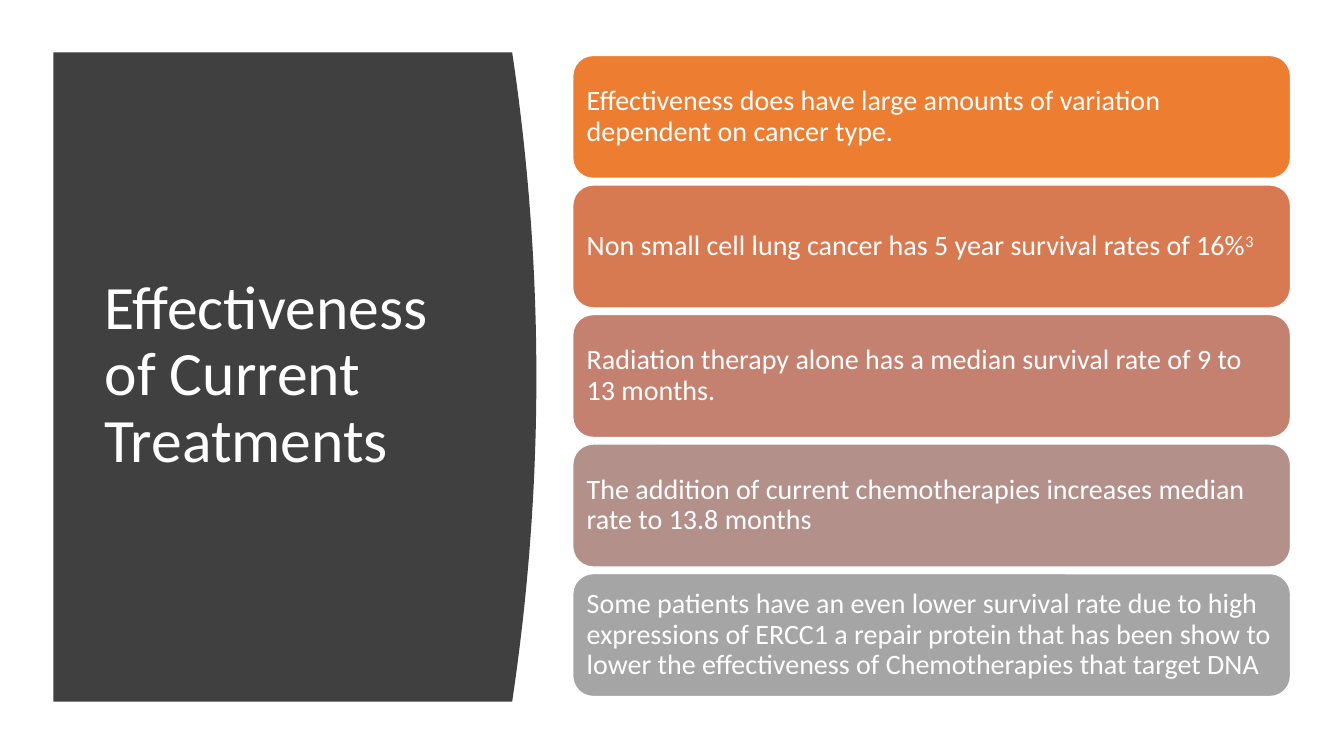
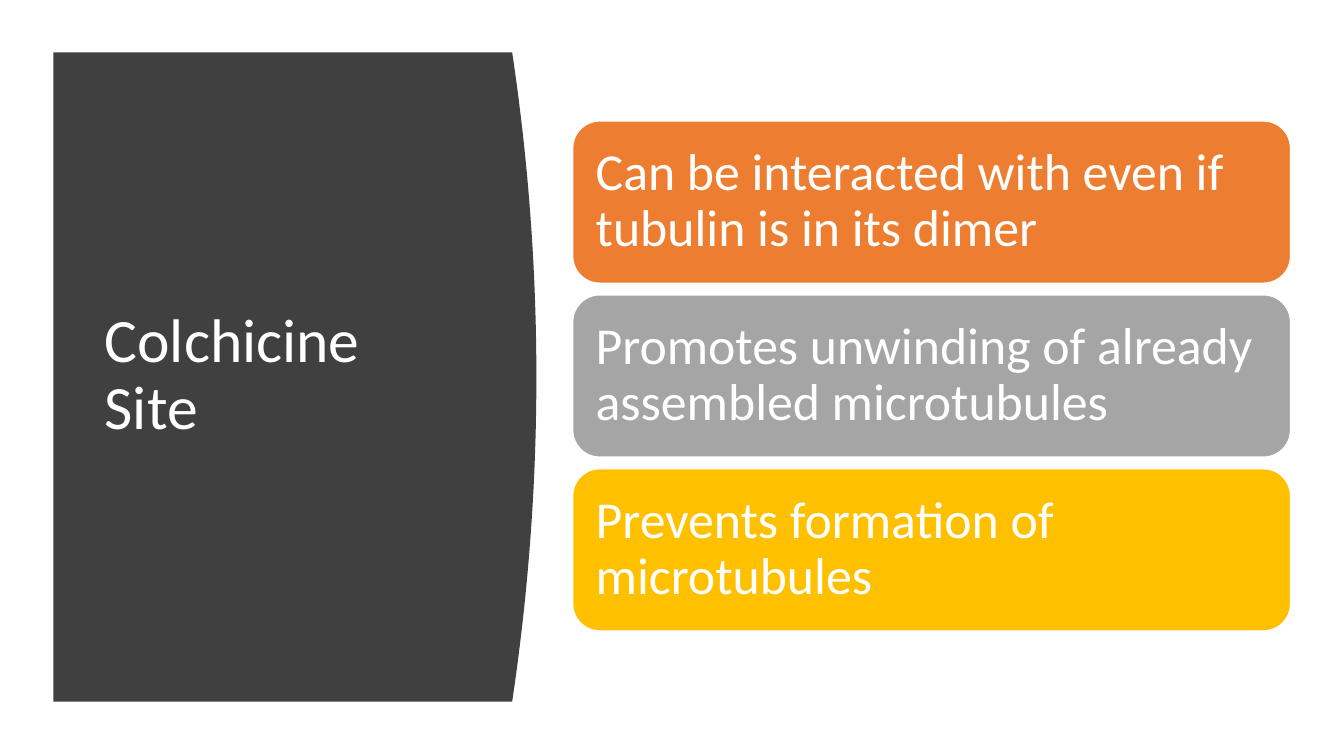
from dataclasses import dataclass

from pptx import Presentation
from pptx.dml.color import RGBColor
from pptx.enum.shapes import MSO_SHAPE
from pptx.enum.text import MSO_ANCHOR, PP_ALIGN
from pptx.shapes.autoshape import Shape
from pptx.slide import Slide
from pptx.text.text import TextFrame
from pptx.util import Inches, Pt

ROUNDED = MSO_SHAPE.ROUNDED_RECTANGLE
MIDDLE = MSO_ANCHOR.MIDDLE
LEFT = PP_ALIGN.LEFT

FONT = "Calibri"
COLORS = {
    "white": "FFFFFF",
    "panel": "404040",
    "orange": "ED7D31",
    "terracotta": "D87A51",
    "rose": "C48170",
    "mauve": "B4908B",
    "gray": "A5A5A5",
    "gold": "FFC000",
}

PANEL_LEFT, PANEL_TOP, PANEL_BOTTOM = 0.53, 0.52, 6.96
PANEL_CORNER, PANEL_BULGE = 5.08, 0.24
CURVE_STEPS = 40
CARD_LEFT, CARD_WIDTH = 5.68, 7.12


@dataclass
class Card:
    text: str
    color: str
    superscript: str = ""


@dataclass
class CardStack:
    title: str
    top: float
    bottom: float
    card_height: float
    inset: float
    size: int
    cards: list[Card]


STACKS = [
    CardStack("Effectiveness of Current Treatments", 0.55, 6.91, 1.22, 0.08, 20, [
        Card("Effectiveness does have large amounts of variation dependent on "
             "cancer type.", "orange"),
        Card("Non small cell lung cancer has 5 year survival rates of 16%",
             "terracotta", "3"),
        Card("Radiation therapy alone has a median survival rate of 9 to 13 months.",
             "rose"),
        Card("The addition of current chemotherapies increases median rate to "
             "13.8 months", "mauve"),
        Card("Some patients have an even lower survival rate due to high expressions "
             "of ERCC1 a repair protein that has been show to lower the effectiveness "
             "of Chemotherapies that target DNA", "gray"),
    ]),
    CardStack("Colchicine Site", 1.2, 6.26, 1.61, 0.15, 37, [
        Card("Can be interacted with even if tubulin is in its dimer", "orange"),
        Card("Promotes unwinding of already assembled microtubules", "gray"),
        Card("Prevents formation of microtubules", "gold"),
    ]),
]


def rgb(name: str) -> RGBColor:
    return RGBColor.from_string(COLORS[name])


def fill_shape(sp: Shape, color: str) -> None:
    sp.shadow.inherit = False
    sp.fill.solid()
    sp.fill.fore_color.rgb = rgb(color)


def write_text(tf: TextFrame, text: str, size: int, superscript: str = "") -> None:
    tf.word_wrap = True
    tf.vertical_anchor = MIDDLE
    p = tf.paragraphs[0]
    p.text = text
    p.alignment = LEFT
    p.line_spacing = 0.9
    if superscript:
        r = p.add_run()
        r.text = superscript
        r.font._element.set("baseline", "30000")
    for r in p.runs:
        r.font.name = FONT
        r.font.size = Pt(size)
        r.font.color.rgb = rgb("white")


def add_title_panel(s: Slide, title: str) -> None:
    """Draw the dark panel, its right edge a parabola, with the title on it."""
    edge = []
    for i in range(CURVE_STEPS + 1):
        t = i / CURVE_STEPS
        x = PANEL_CORNER + PANEL_BULGE * 4 * t * (1 - t)
        y = PANEL_TOP + (PANEL_BOTTOM - PANEL_TOP) * t
        edge.append((Inches(x), Inches(y)))
    outline = s.shapes.build_freeform(Inches(PANEL_LEFT), Inches(PANEL_TOP))
    outline.add_line_segments(edge + [(Inches(PANEL_LEFT), Inches(PANEL_BOTTOM))])
    sp = outline.convert_to_shape()
    fill_shape(sp, "panel")
    sp.line.fill.background()

    box = s.shapes.add_textbox(Inches(0.94), Inches(1.11), Inches(3.74), Inches(5.24))
    write_text(box.text_frame, title, 44)


def add_cards(s: Slide, stack: CardStack) -> None:
    """Spread the cards evenly between the top and bottom of the stack."""
    pitch = (stack.bottom - stack.top - stack.card_height) / (len(stack.cards) - 1)
    for i, card in enumerate(stack.cards):
        sp = s.shapes.add_shape(ROUNDED, Inches(CARD_LEFT), Inches(stack.top + i * pitch),
                                Inches(CARD_WIDTH), Inches(stack.card_height))
        fill_shape(sp, card.color)
        sp.line.color.rgb = rgb("white")
        sp.line.width = Pt(1)
        tf = sp.text_frame
        tf.margin_left = tf.margin_right = Inches(stack.inset)
        tf.margin_top = tf.margin_bottom = Inches(stack.inset)
        write_text(tf, card.text, stack.size, card.superscript)


def main() -> None:
    prs = Presentation()
    prs.slide_width = Inches(13.33)
    prs.slide_height = Inches(7.5)
    blank = prs.slide_layouts[6]
    for stack in STACKS:
        s = prs.slides.add_slide(blank)
        add_title_panel(s, stack.title)
        add_cards(s, stack)
    prs.save("out.pptx")


if __name__ == "__main__":
    main()
